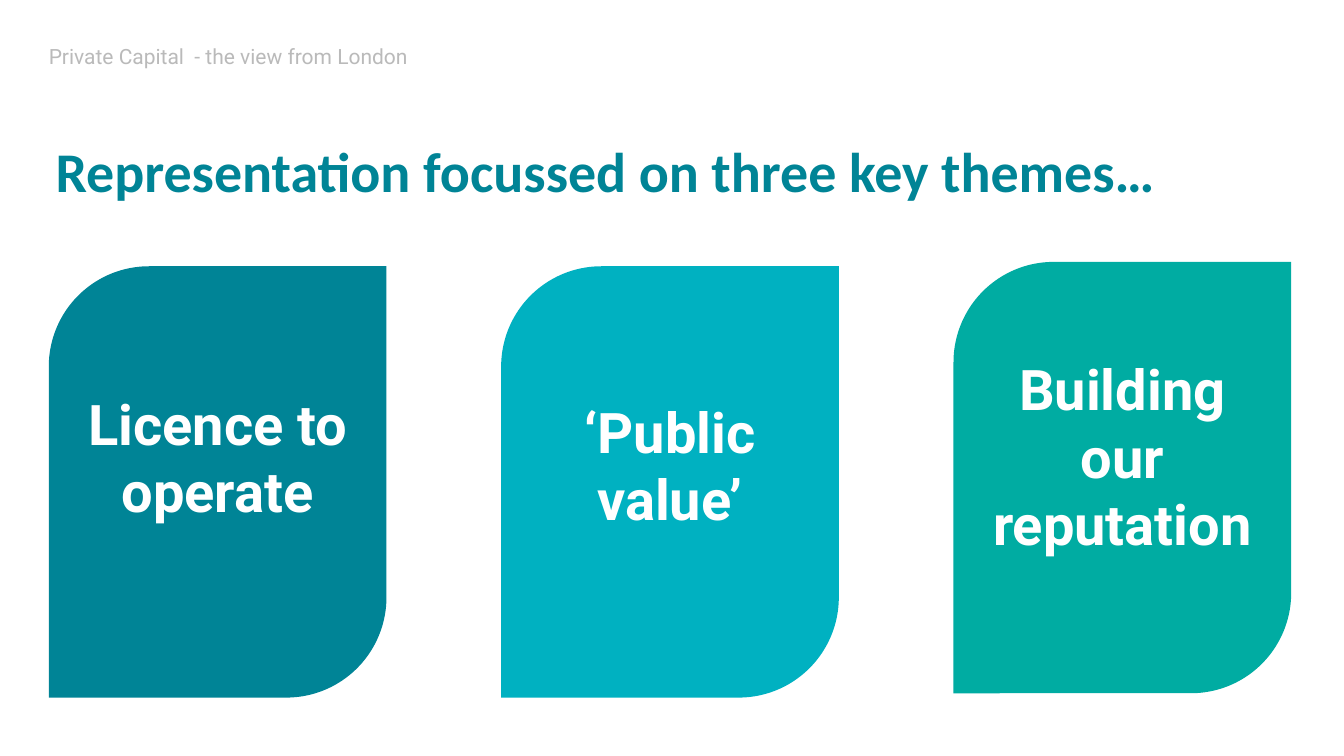
import pptx
import pptx.util
import pptx.dml.color
import pptx.enum.shapes
import pptx.enum.text

Cm, Pt = pptx.util.Cm, pptx.util.Pt
COLORS = {"grey": "BABABA", "petrol": "008496", "cyan": "00B1C1",
          "green": "00ACA2", "white": "FFFFFF"}


def rgb(name):
    return pptx.dml.color.RGBColor.from_string(COLORS[name])


def write(tf, text, font, size, color, bold):
    tf.word_wrap = True
    tf.text = text
    p = tf.paragraphs[0]
    f = p.runs[0].font
    f.name, f.size, f.bold = font, Pt(size), bold
    f.color.rgb = rgb(color)
    return p


prs = pptx.Presentation()
prs.slide_width, prs.slide_height = Cm(33.87), Cm(19.05)
s = prs.slides.add_slide(prs.slide_layouts[6])

# Header and title
headings = [
    ("Private Capital  - the view from London",
     1.23, 1.17, 25.65, 0.97, "Roboto", 15, "grey", False),
    ("Representation focussed on three key themes…",
     1.4, 3.63, 30.96, 1.88, "Calibri", 40, "petrol", True),
]
for text, x, y, w, h, font, size, color, bold in headings:
    tf = s.shapes.add_textbox(Cm(x), Cm(y), Cm(w), Cm(h)).text_frame
    tf.margin_left = tf.margin_right = tf.margin_top = tf.margin_bottom = 0
    p = write(tf, text, font, size, color, bold)
    p.line_spacing = 0.9

# Theme cards: text, fill, top, bottom inset that lifts the text
cards = [
    ("Licence to operate", "petrol", 6.71, 1.41),
    ("‘Public value’", "cyan", 6.71, 0.99),
    ("Building our reputation", "green", 6.6, 1.23),
]
for i, (text, fill, top, lift) in enumerate(cards):
    sp = s.shapes.add_shape(
        pptx.enum.shapes.MSO_SHAPE.ROUND_2_DIAG_RECTANGLE,
        Cm(1.23 + i * 11.4), Cm(top), Cm(8.51), Cm(10.87))
    sp.adjustments[0], sp.adjustments[1] = 0.297, 0
    sp.shadow.inherit = False
    sp.fill.solid()
    sp.fill.fore_color.rgb = rgb(fill)
    sp.line.fill.background()
    tf = sp.text_frame
    tf.margin_left = tf.margin_right = 0
    tf.margin_top, tf.margin_bottom = Cm(0.13), Cm(lift)
    tf.vertical_anchor = pptx.enum.text.MSO_ANCHOR.MIDDLE
    p = write(tf, text, "Roboto", 40, "white", True)
    p.alignment = pptx.enum.text.PP_ALIGN.CENTER

prs.save("out.pptx")
